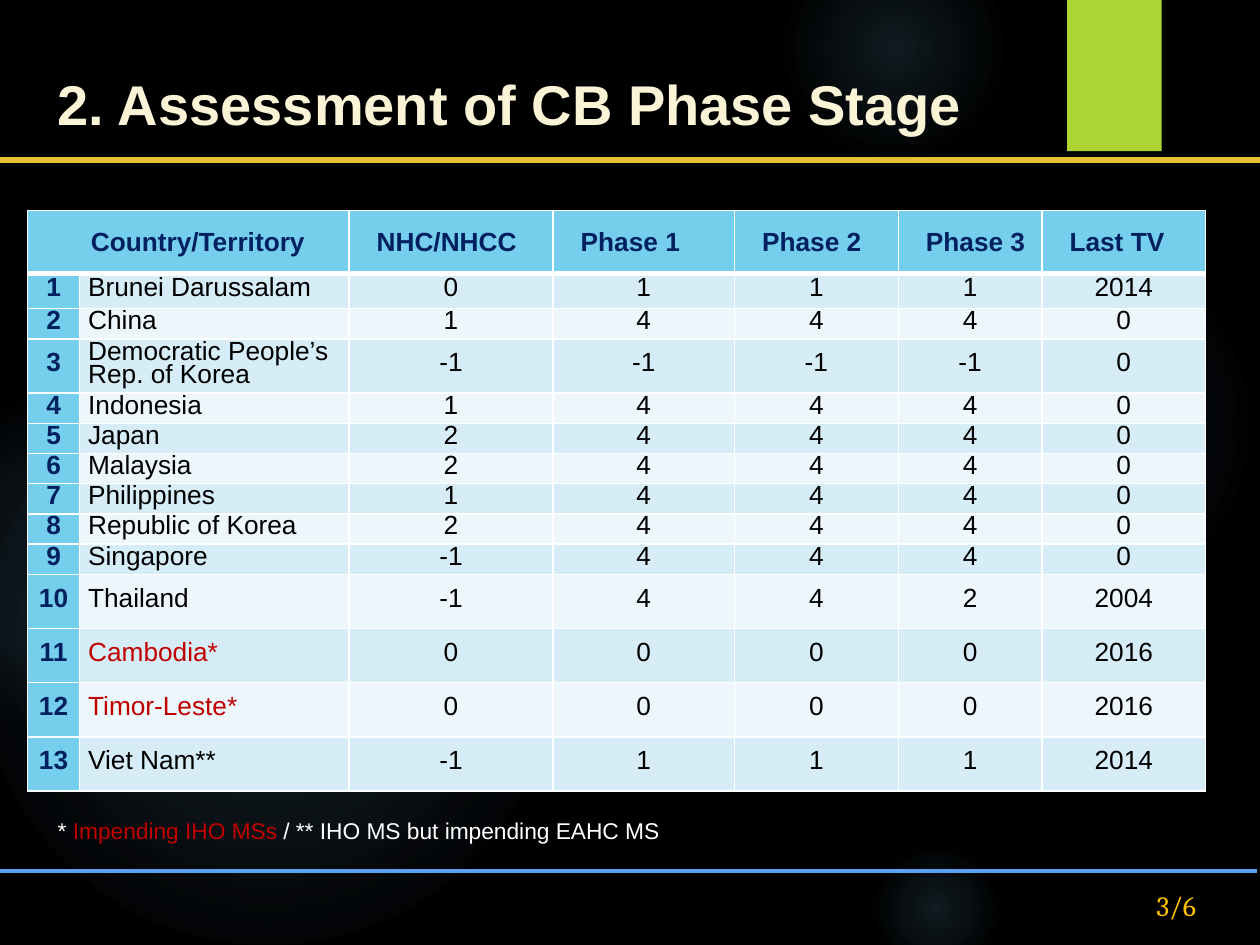
from pptx import Presentation
from pptx.dml.color import RGBColor
from pptx.enum.shapes import MSO_CONNECTOR, MSO_SHAPE
from pptx.enum.text import MSO_ANCHOR, PP_ALIGN
from pptx.oxml import parse_xml
from pptx.oxml.ns import nsdecls, qn
from pptx.util import Inches, Pt

LINE = MSO_CONNECTOR.STRAIGHT
RECT, OVAL = MSO_SHAPE.RECTANGLE, MSO_SHAPE.OVAL
TOP, MIDDLE = MSO_ANCHOR.TOP, MSO_ANCHOR.MIDDLE
LEFT, CENTER = PP_ALIGN.LEFT, PP_ALIGN.CENTER

BLACK, WHITE, RED, NAVY = "000000", "FFFFFF", "C00000", "002060"
HEADER_FILL, BAND_FILLS = "75CEEC", ("D6EDF8", "ECF6FB")
GLOW = "7AC4F0"
GLOWS = [
    (6.89, 1.83, 3.08, [(0, 7), (36, 6), (69, 0)]),
    (6.22, -0.5, 1.75, [(0, 14), (36, 7), (73, 0)]),
    (6.89, 6.67, 1.08, [(0, 14), (36, 7), (66, 0)]),
    (-0.17, 2.92, 4.58, [(0, 11), (36, 10), (75, 0)]),
    (-0.92, 3.17, 2.58, [(0, 8), (36, 8), (72, 0)]),
]
COL_WIDTHS = [0.41, 2.14, 1.62, 1.44, 1.3, 1.14, 1.3]
ROW_HEIGHTS = [0.5, 0.28, 0.24, 0.43] + [0.24] * 6 + [0.43] * 4
HEADERS = ["Country/Territory", "", "NHC/NHCC", "Phase 1", "Phase 2",
           "Phase 3", "Last TV"]
COUNTRIES = [
    ("Brunei Darussalam", 0, 1, 1, 1, 2014),
    ("China", 1, 4, 4, 4, 0),
    ("Democratic People’s Rep. of Korea", -1, -1, -1, -1, 0),
    ("Indonesia", 1, 4, 4, 4, 0),
    ("Japan", 2, 4, 4, 4, 0),
    ("Malaysia", 2, 4, 4, 4, 0),
    ("Philippines", 1, 4, 4, 4, 0),
    ("Republic of Korea", 2, 4, 4, 4, 0),
    ("Singapore", -1, 4, 4, 4, 0),
    ("Thailand", -1, 4, 4, 2, 2004),
    ("Cambodia*", 0, 0, 0, 0, 2016),
    ("Timor-Leste*", 0, 0, 0, 0, 2016),
    ("Viet Nam**", -1, 1, 1, 1, 2014),
]
IMPENDING = {"Cambodia*", "Timor-Leste*"}


def rgb(value):
    """Return the colour for a hex string."""
    return RGBColor.from_string(value)


def add_run(p, text, size, color, bold=False, font="Arial"):
    """Add one formatted run to a paragraph."""
    r = p.add_run()
    r.text = text
    r.font.size, r.font.name, r.font.bold = Pt(size), font, bold
    r.font.color.rgb = rgb(color)


def add_text(s, box, runs, size, anchor=TOP, align=LEFT, wrap=True, **style):
    """Add a one-paragraph text box from (text, colour) runs."""
    tf = s.shapes.add_textbox(*map(Inches, box)).text_frame
    tf.word_wrap, tf.vertical_anchor = wrap, anchor
    p = tf.paragraphs[0]
    p.alignment = align
    for text, color in runs:
        add_run(p, text, size, color, **style)


def add_plain_shape(s, kind, box, color):
    """Add a filled preset shape without shadow or outline."""
    sp = s.shapes.add_shape(kind, *map(Inches, box))
    sp.shadow.inherit = False
    sp.line.fill.background()
    sp.fill.solid()
    sp.fill.fore_color.rgb = rgb(color)
    return sp


def add_glow(s, left, top, size, stops):
    """Add a circle that fades out from its centre."""
    sp = add_plain_shape(s, OVAL, (left, top, size, size), GLOW)
    marks = "".join(
        f'<a:gs pos="{pos * 1000}"><a:srgbClr val="{GLOW}">'
        f'<a:alpha val="{alpha * 1000}"/></a:srgbClr></a:gs>'
        for pos, alpha in stops)
    gradient = parse_xml(
        f'<a:gradFill {nsdecls("a")} rotWithShape="1"><a:gsLst>{marks}</a:gsLst>'
        '<a:path path="circle"><a:fillToRect l="50000" t="50000" r="50000" '
        'b="50000"/></a:path></a:gradFill>')
    props = sp._element.spPr
    props.replace(props.find(qn("a:solidFill")), gradient)


def add_rule(s, left, y, color, width):
    """Add a horizontal line ten inches long."""
    cx = s.shapes.add_connector(
        LINE, Inches(left), Inches(y), Inches(left + 10), Inches(y))
    cx.line.color.rgb = rgb(color)
    cx.line.width = Pt(width)
    cx._element.spPr.append(parse_xml(f'<a:effectLst {nsdecls("a")}/>'))


def style_cell(cell, fill, top=1, bottom=1):
    """Set the margins, white borders and fill of a cell."""
    cell.margin_left = cell.margin_right = Inches(0.07)
    cell.margin_top = cell.margin_bottom = 0
    cell.vertical_anchor = MIDDLE
    props = cell._tc.get_or_add_tcPr()
    for side, width in (("L", 1), ("R", 1), ("T", top), ("B", bottom)):
        props.append(parse_xml(
            f'<a:ln{side} {nsdecls("a")} w="{Pt(width)}"><a:solidFill>'
            f'<a:srgbClr val="{WHITE}"/></a:solidFill></a:ln{side}>'))
    cell.fill.solid()
    cell.fill.fore_color.rgb = rgb(fill)


def fill_header(table):
    """Write the header row and merge its first two cells."""
    for col, text in enumerate(HEADERS):
        cell = table.cell(0, col)
        style_cell(cell, HEADER_FILL, bottom=3)
        if text:
            p = cell.text_frame.paragraphs[0]
            p.alignment = LEFT if col else CENTER
            p._p.get_or_add_pPr().set("marL", str(Inches(0.15)))
            add_run(p, text, 15, NAVY, bold=True)
    table.cell(0, 0).merge(table.cell(0, 1))


def fill_country(table, row, country):
    """Write one numbered country row."""
    for col, value in enumerate((row, *country)):
        cell = table.cell(row, col)
        fill = BAND_FILLS[(row - 1) % 2] if col else HEADER_FILL
        style_cell(cell, fill, top=3 if row == 1 else 1)
        color = BLACK if col else NAVY
        if value in IMPENDING:
            color = RED
        p = cell.text_frame.paragraphs[0]
        p.alignment = LEFT if col == 1 else CENTER
        p.line_spacing, p.space_before = Pt(13), Pt(0.8)
        add_run(p, str(value), 15, color, bold=col == 0)


def add_phase_table(s):
    """Add the table of countries and their phases."""
    table = s.shapes.add_table(
        len(ROW_HEIGHTS), len(COL_WIDTHS), Inches(0.22), Inches(1.67),
        Inches(sum(COL_WIDTHS)), Inches(sum(ROW_HEIGHTS))).table
    for column, width in zip(table.columns, COL_WIDTHS):
        column.width = Inches(width)
    for row, height in zip(table.rows, ROW_HEIGHTS):
        row.height = Inches(height)
    fill_header(table)
    for row, country in enumerate(COUNTRIES, 1):
        fill_country(table, row, country)


def main():
    """Build the slide and save it."""
    prs = Presentation()
    prs.slide_width, prs.slide_height = Inches(10), Inches(7.5)
    s = prs.slides.add_slide(prs.slide_layouts[6])
    s.background.fill.solid()
    s.background.fill.fore_color.rgb = rgb(BLACK)
    for glow in GLOWS:
        add_glow(s, *glow)
    add_plain_shape(s, RECT, (8.47, 0, 0.75, 1.2), "ACD433")
    add_text(s, (0.36, 0.48, 8.04, 0.67),
             [("2. Assessment of CB Phase Stage", "FAF3D6")], 32,
             anchor=MIDDLE, bold=True)
    add_rule(s, 0, 1.27, "E6C133", 3)
    add_rule(s, -0.02, 6.91, "5AA0F5", 2.25)
    add_phase_table(s)
    add_text(s, (0.36, 6.43, 5.04, 0.32),
             [("* ", WHITE), ("Impending IHO MSs ", RED),
              ("/ ** IHO MS but impending EAHC MS", WHITE)], 13, wrap=False)
    add_text(s, (8.8, 7, 1.07, 0.37), [("3/6", "FFC000")], 16,
             align=CENTER, font="Cambria")
    prs.save("out.pptx")


if __name__ == "__main__":
    main()
